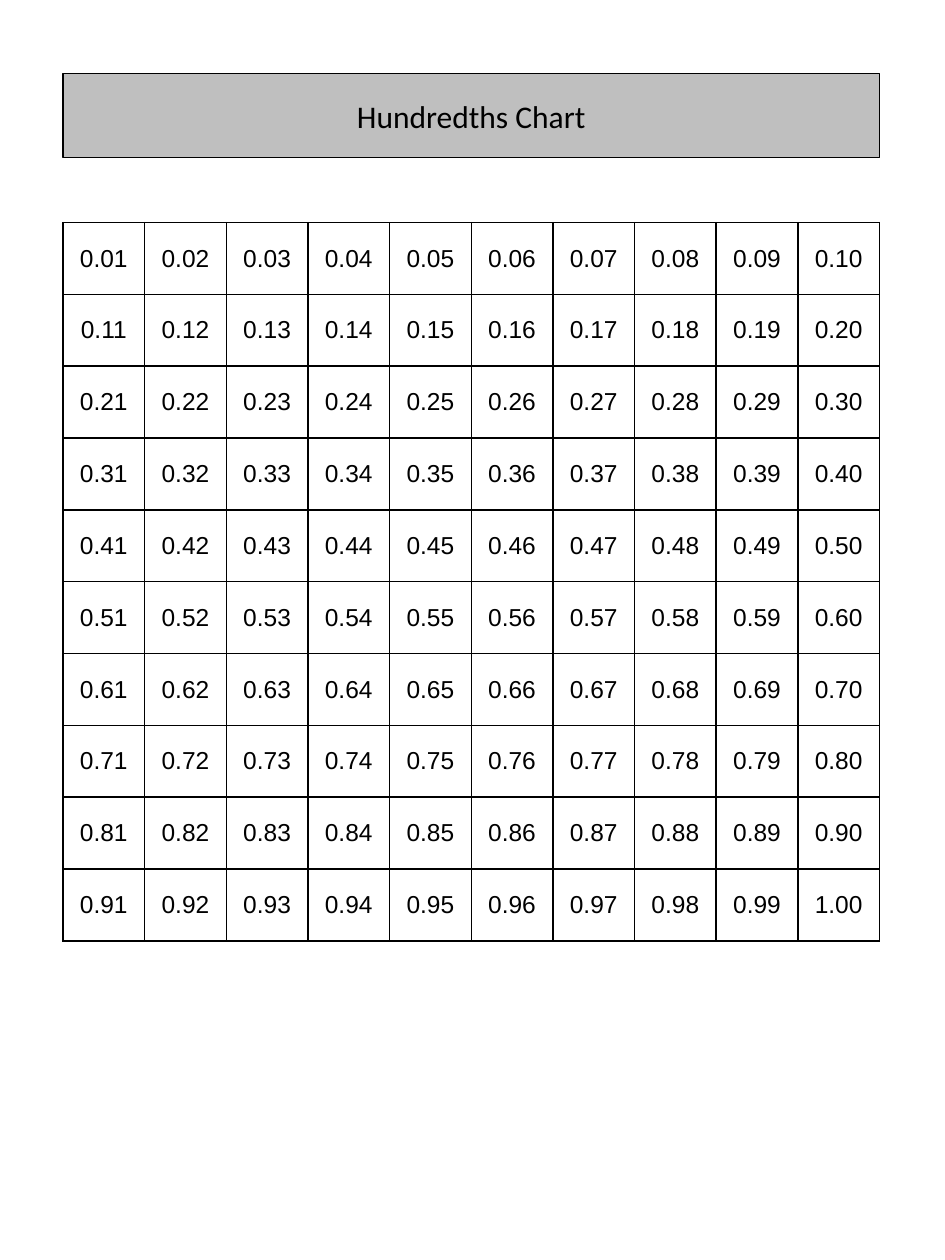
from dataclasses import dataclass

from lxml.etree import SubElement
from pptx import Presentation
from pptx.dml.color import RGBColor
from pptx.enum.text import MSO_ANCHOR, MSO_AUTO_SIZE, PP_ALIGN
from pptx.oxml.ns import qn
from pptx.util import Pt

BLACK = "000000"
GRAY = "BFBFBF"


@dataclass
class Grid:
    left: float
    top: float
    col_width: float
    row_height: float
    count: int


@dataclass
class TextStyle:
    font: str
    size: float


def color(value: str) -> RGBColor:
    return RGBColor.from_string(value)


def add_text(tf, text: str, style: TextStyle) -> None:
    p = tf.paragraphs[0]
    p.alignment = PP_ALIGN.CENTER
    r = p.add_run()
    r.text = text
    r.font.name = style.font
    r.font.size = Pt(style.size)
    r.font.color.rgb = color(BLACK)


def add_borders(cell, width: float) -> None:
    tc_pr = cell._tc.get_or_add_tcPr()
    for tag in ("a:lnL", "a:lnR", "a:lnT", "a:lnB"):
        ln = SubElement(tc_pr, qn(tag), w=str(Pt(width)))
        fill = SubElement(ln, qn("a:solidFill"))
        SubElement(fill, qn("a:srgbClr"), val=BLACK)


def draw_title(s, text: str, style: TextStyle) -> None:
    sp = s.shapes.title
    sp.left, sp.top, sp.width, sp.height = Pt(36), Pt(42), Pt(466.6), Pt(48)
    sp.fill.solid()
    sp.fill.fore_color.rgb = color(GRAY)
    sp.line.color.rgb = color(BLACK)
    sp.line.width = Pt(1)
    tf = sp.text_frame
    tf.auto_size = MSO_AUTO_SIZE.NONE
    tf.vertical_anchor = MSO_ANCHOR.MIDDLE
    add_text(tf, text, style)


def draw_grid(s, grid: Grid, style: TextStyle) -> None:
    n = grid.count
    table = s.shapes.add_table(
        n, n, Pt(grid.left), Pt(grid.top),
        Pt(n * grid.col_width), Pt(n * grid.row_height),
    ).table
    table.first_row = False
    table.horz_banding = False
    for col in table.columns:
        col.width = Pt(grid.col_width)
    for row in table.rows:
        row.height = Pt(grid.row_height)
    for i, cell in enumerate(table.iter_cells(), start=1):
        cell.vertical_anchor = MSO_ANCHOR.MIDDLE
        add_borders(cell, 1)
        cell.fill.background()
        add_text(cell.text_frame, f"{i / 100:.2f}", style)


def main() -> None:
    prs = Presentation()
    prs.slide_width, prs.slide_height = Pt(540), Pt(720)
    s = prs.slides.add_slide(prs.slide_layouts[5])
    draw_title(s, "Hundredths Chart", TextStyle("Calibri", 18))
    draw_grid(s, Grid(36, 127.2, 46.66, 41.06, 10), TextStyle("Arial", 14))
    prs.save("out.pptx")


if __name__ == "__main__":
    main()
